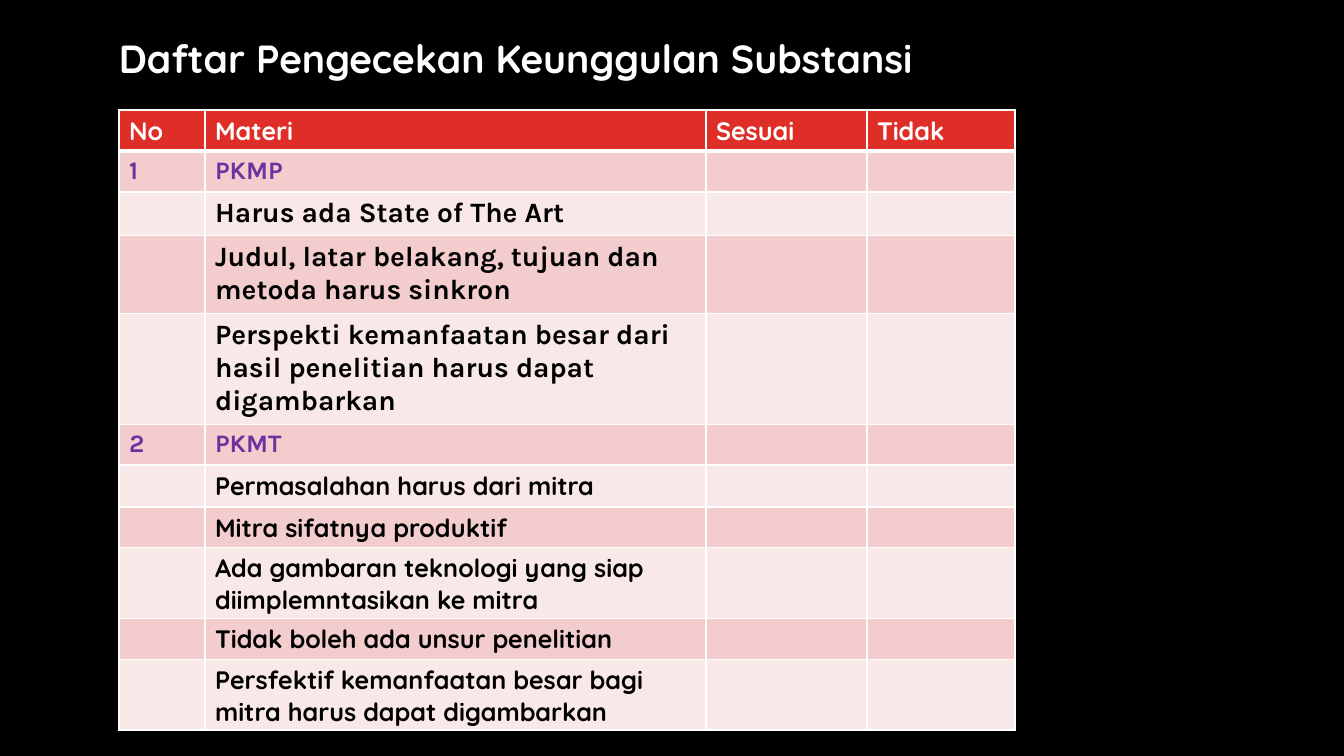
from lxml import etree
from pptx import Presentation
from pptx.dml.color import RGBColor
from pptx.enum.text import MSO_AUTO_SIZE
from pptx.oxml.ns import qn
from pptx.util import Pt

EMU_PER_PX = 12192000 / 1344
COLORS = {
    "black": "000000",
    "white": "FFFFFF",
    "header": "DF2E28",
    "purple": "7030A0",
    "dark_band": "F3CDCD",
    "light_band": "F9E8E8",
}
STYLES = {
    "title": ("Quicksand", 28, "white"),
    "header": ("Quicksand", 18, "white"),
    "group": ("Karla", 18, "purple"),
    "large": ("Karla", 20, "black"),
    "item": ("Quicksand", 18, "black"),
}
COLUMN_WIDTHS = [86, 501, 161, 148]
ROWS = [
    (41, "header", ["No", "Materi", "Sesuai", "Tidak"]),
    (41, "group", ["1", "PKMP", "", ""]),
    (43, "large", ["", "Harus ada State of The Art", "", ""]),
    (78, "large", ["", "Judul, latar belakang, tujuan dan metoda harus sinkron", "", ""]),
    (111, "large", ["", "Perspekti kemanfaatan besar dari hasil penelitian harus dapat digambarkan", "", ""]),
    (40, "group", ["2", "PKMT", "", ""]),
    (42, "item", ["", "Permasalahan harus dari mitra", "", ""]),
    (40, "item", ["", "Mitra sifatnya produktif", "", ""]),
    (71, "item", ["", "Ada gambaran teknologi yang siap diimplemntasikan ke mitra", "", ""]),
    (41, "item", ["", "Tidak boleh ada unsur penelitian", "", ""]),
    (70, "item", ["", "Persfektif kemanfaatan besar bagi mitra harus dapat digambarkan", "", ""]),
]


def px(n):
    return round(n * EMU_PER_PX)


def rgb(name):
    return RGBColor.from_string(COLORS[name])


def set_text(tf, text, style):
    tf.text = text
    name, size, color = STYLES[style]
    for r in tf.paragraphs[0].runs:
        r.font.name = name
        r.font.size = Pt(size)
        r.font.bold = True
        r.font.color.rgb = rgb(color)


def set_borders(cell, bottom_width):
    tc_pr = cell._tc.get_or_add_tcPr()
    widths = {"a:lnL": 1, "a:lnR": 1, "a:lnT": 1, "a:lnB": bottom_width}
    for i, (tag, width) in enumerate(widths.items()):
        ln = etree.Element(qn(tag), w=str(Pt(width)))
        fill = etree.SubElement(ln, qn("a:solidFill"))
        etree.SubElement(fill, qn("a:srgbClr"), val=COLORS["white"])
        tc_pr.insert(i, ln)


def add_title(slide, x, y, w, h):
    sp = slide.shapes.add_textbox(px(x), px(y), px(w), px(h))
    tf = sp.text_frame
    tf.word_wrap = False
    tf.auto_size = MSO_AUTO_SIZE.SHAPE_TO_FIT_TEXT
    set_text(tf, "Daftar Pengecekan Keunggulan Substansi", "title")


def add_checklist(slide, x, y):
    w, h = sum(COLUMN_WIDTHS), sum(row[0] for row in ROWS)
    table = slide.shapes.add_table(
        len(ROWS), len(COLUMN_WIDTHS), px(x), px(y), px(w), px(h)
    ).table
    for column, width in zip(table.columns, COLUMN_WIDTHS):
        column.width = px(width)
    for i, (height, style, texts) in enumerate(ROWS):
        table.rows[i].height = px(height)
        band = "header" if i == 0 else "dark_band" if i % 2 else "light_band"
        for j, text in enumerate(texts):
            cell = table.cell(i, j)
            cell.fill.solid()
            cell.fill.fore_color.rgb = rgb(band)
            set_borders(cell, 3 if i == 0 else 1)
            if text:
                set_text(cell.text_frame, text, style)


def main():
    prs = Presentation()
    prs.slide_width, prs.slide_height = px(1344), px(756)
    slide = prs.slides.add_slide(prs.slide_layouts[6])
    slide.background.fill.solid()
    slide.background.fill.fore_color.rgb = rgb("black")
    add_title(slide, 109, 29, 825, 57)
    add_checklist(slide, 119, 110)
    prs.save("out.pptx")


if __name__ == "__main__":
    main()
